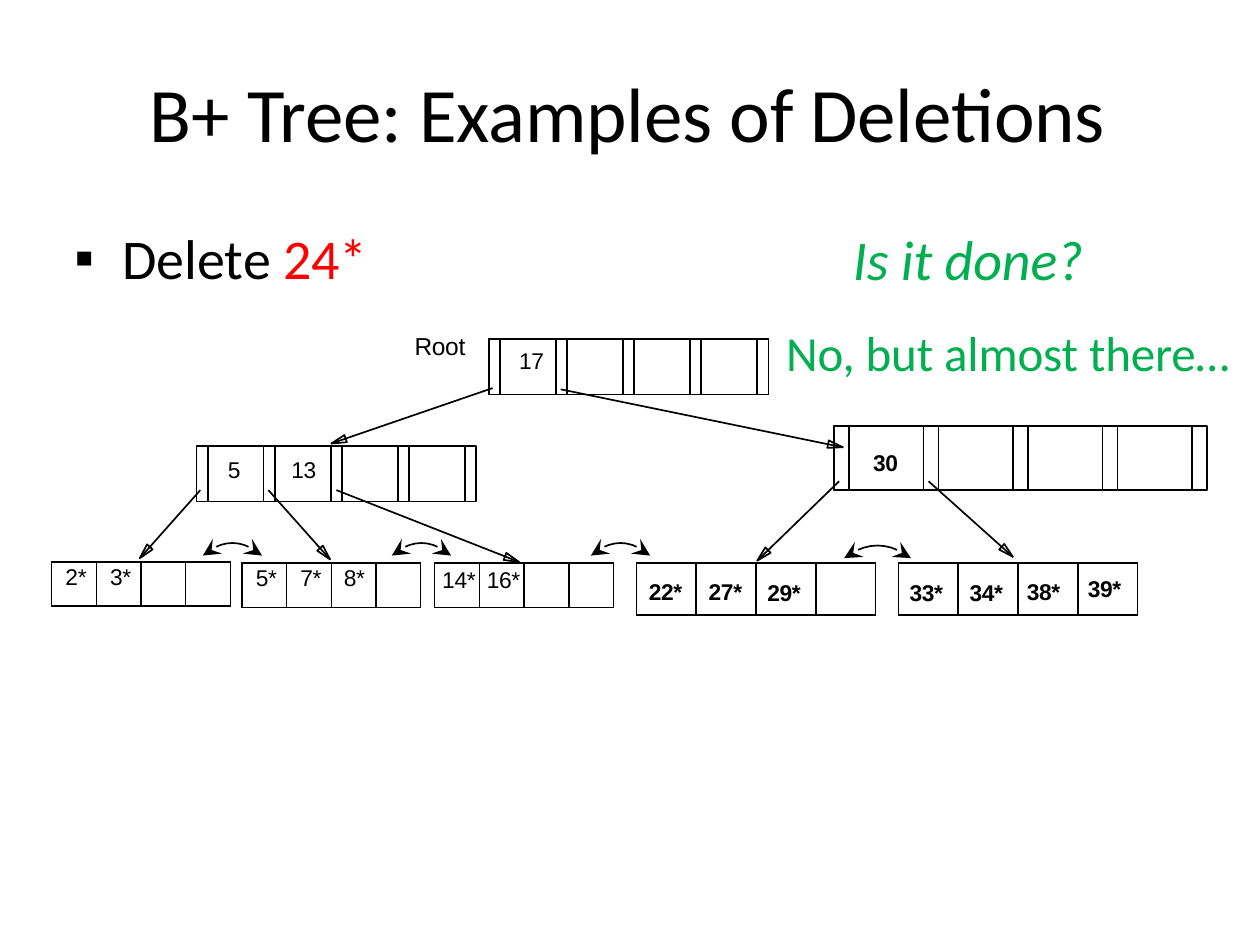
"""Build the B+ tree deletion slide."""
from dataclasses import dataclass
from math import hypot
from typing import NamedTuple

from lxml import etree
from pptx import Presentation
from pptx import util as u
from pptx.dml.color import RGBColor
from pptx.enum import shapes, text
from pptx.oxml.ns import qn


@dataclass(frozen=True)
class Theme:
    black: str = "000000"
    red: str = "FF0000"
    green: str = "00AF50"
    heading_font: str = "Calibri"
    tree_font: str = "Arial"
    title: int = 44
    body: int = 32
    answer: int = 28
    label: int = 14
    key: int = 13
    tight: int = -20
    line: float = 0.96
    border: int = 1


T = Theme()


class Run(NamedTuple):
    text: str
    size: int
    color: str = T.black
    font: str = T.heading_font
    bold: bool = False
    italic: bool = False
    spacing: int = 0


class Key(NamedTuple):
    text: str
    left: float
    top: float


class Leaf(NamedTuple):
    x: float
    y: float
    width: float
    height: float
    bold: bool
    keys: list[Key]


class Inner(NamedTuple):
    x: float
    y: float
    pointer: float
    width: float
    height: float
    bold: bool
    keys: list[Key]

    @property
    def pitch(self) -> float:
        return (self.width - self.pointer) / SLOTS


class Arrow(NamedTuple):
    x1: float
    y1: float
    x2: float
    y2: float


class Link(NamedTuple):
    x: float
    y: float
    width: float


SLOTS = 4
ROOT = Inner(3.88, 2.69, 0.09, 2.22, 0.44, False, [Key("17", 0.15, 0.08)])
SUBTREES = [
    (Inner(1.56, 3.54, 0.09, 2.22, 0.44, False, [Key("5", 0.16, 0.08), Key("13", 0.13, 0.08)]),
     [Arrow(3.91, 3.08, 2.63, 3.52), Arrow(1.59, 3.89, 1.11, 4.43),
      Arrow(2.13, 3.89, 2.62, 4.44), Arrow(2.67, 3.89, 4.12, 4.46)]),
    (Inner(6.62, 3.38, 0.12, 2.96, 0.51, True, [Key("30", 0.19, 0.18)]),
     [Arrow(4.45, 3.09, 6.69, 3.55), Arrow(6.66, 3.82, 6.01, 4.45), Arrow(7.37, 3.82, 8.04, 4.42)]),
]
LEAVES = [
    Leaf(0.41, 4.46, 1.42, 0.35, False, [Key("2*", 0.11, 0.02), Key("3*", 0.11, 0.02)]),
    Leaf(1.92, 4.47, 1.42, 0.35, False,
         [Key("5*", 0.11, 0.02), Key("7*", 0.11, 0.02), Key("8*", 0.1, 0.02)]),
    Leaf(3.45, 4.47, 1.42, 0.35, False, [Key("14*", 0.06, 0.04), Key("16*", 0.06, 0.04)]),
    Leaf(5.05, 4.47, 1.9, 0.41, True,
         [Key("22*", 0.1, 0.13), Key("27*", 0.1, 0.13), Key("29*", 0.09, 0.14)]),
    Leaf(7.13, 4.47, 1.9, 0.41, True,
         [Key("33*", 0.09, 0.14), Key("34*", 0.09, 0.14), Key("38*", 0.07, 0.13), Key("39*", 0.08, 0.11)]),
]
LINKS = [Link(1.61, 4.41, 0.47), Link(3.11, 4.41, 0.47), Link(4.69, 4.41, 0.47), Link(6.7, 4.43, 0.53)]


def add_runs(p, runs: list[Run]) -> None:
    for run in runs:
        r = p.add_run()
        r.text = run.text
        r.font.size = u.Pt(run.size)
        r.font.name = run.font
        r.font.bold = run.bold
        r.font.italic = run.italic
        r.font.color.rgb = RGBColor.from_string(run.color)
        r._r.get_or_add_rPr().set("spc", str(run.spacing))


def tree_run(words: str, size: int, bold: bool = False) -> Run:
    return Run(words, size, font=T.tree_font, bold=bold, spacing=T.tight)


def set_insets(holder, left: float = 0, top: float = 0) -> None:
    holder.margin_left, holder.margin_top = u.Inches(left), u.Inches(top)
    holder.margin_right = holder.margin_bottom = 0


def add_text(s, x: float, y: float, w: float, h: float, runs: list[Run]):
    sp = s.shapes.add_textbox(u.Inches(x), u.Inches(y), u.Inches(w), u.Inches(h))
    tf = sp.text_frame
    set_insets(tf)
    tf.word_wrap = True
    add_runs(tf.paragraphs[0], runs)
    return tf


def set_outline(sp) -> None:
    sp.shadow.inherit = False
    sp.fill.background()
    set_line(sp.line)


def set_line(line) -> None:
    line.color.rgb = RGBColor.from_string(T.black)
    line.width = u.Pt(T.line)


def add_borders(cell) -> None:
    pr = cell._tc.get_or_add_tcPr()
    for i, side in enumerate(("lnL", "lnR", "lnT", "lnB")):
        ln = etree.Element(qn(f"a:{side}"), w=str(u.Pt(T.border)))
        fill = etree.SubElement(ln, qn("a:solidFill"))
        etree.SubElement(fill, qn("a:srgbClr"), val=T.black)
        pr.insert(i, ln)


def add_row(s, node: Leaf | Inner, widths: list[float], keys: dict[int, Key]) -> None:
    table = s.shapes.add_table(1, len(widths), u.Inches(node.x), u.Inches(node.y),
                               u.Inches(node.width), u.Inches(node.height)).table
    table.first_row = table.horz_banding = False
    for i, width in enumerate(widths):
        table.columns[i].width = u.Inches(width)
        cell = table.cell(0, i)
        cell.fill.background()
        add_borders(cell)
        set_insets(cell)
        if i in keys:
            key = keys[i]
            set_insets(cell, key.left, key.top)
            add_runs(cell.text_frame.paragraphs[0], [tree_run(key.text, T.key, node.bold)])


def add_root(s, node: Inner) -> None:
    widths = [node.pointer, node.pitch - node.pointer] * SLOTS + [node.pointer]
    add_row(s, node, widths, {2 * i + 1: key for i, key in enumerate(node.keys)})


def add_leaf(s, leaf: Leaf) -> None:
    add_row(s, leaf, [leaf.width / SLOTS] * SLOTS, dict(enumerate(leaf.keys)))


def box(x: float, y: float, w: float, h: float) -> list[tuple[float, float]]:
    return [(x, y), (x + w, y), (x + w, y + h), (x, y + h)]


def arrowhead(a: Arrow, length: float = 0.12, half: float = 0.03) -> list[tuple[float, float]]:
    size = hypot(a.x2 - a.x1, a.y2 - a.y1)
    dx, dy = (a.x2 - a.x1) / size, (a.y2 - a.y1) / size
    bx, by = a.x2 - length * dx, a.y2 - length * dy
    return [(a.x2, a.y2), (bx - half * dy, by + half * dx), (bx + half * dy, by - half * dx)]


def add_outline(s, contours: list[list[tuple[float, float]]], close: bool = True):
    builder = None
    for contour in contours:
        start, *rest = [(u.Inches(x), u.Inches(y)) for x, y in contour]
        if builder is None:
            builder = s.shapes.build_freeform(*start)
        else:
            builder.move_to(*start)
        builder.add_line_segments(rest, close=close)
    sp = builder.convert_to_shape()
    set_outline(sp)
    return sp


def add_subtree(s, node: Inner, arrows: list[Arrow]) -> None:
    slots = [box(node.x + i * node.pitch, node.y, width, node.height)
             for i in range(SLOTS) for width in (node.pitch, node.pointer)]
    last = box(node.x + SLOTS * node.pitch, node.y, node.pointer, node.height)
    add_outline(s, [*slots, last, *map(arrowhead, arrows)])
    for arrow in arrows:
        add_shaft(s, arrow)
    for i, key in enumerate(node.keys):
        add_key(s, node, node.x + i * node.pitch + node.pointer, key)


def add_key(s, node: Inner, x: float, key: Key) -> None:
    sp = s.shapes.add_shape(shapes.MSO_SHAPE.RECTANGLE, u.Inches(x), u.Inches(node.y),
                            u.Inches(node.pitch - node.pointer), u.Inches(node.height))
    set_outline(sp)
    tf = sp.text_frame
    set_insets(tf, key.left, key.top)
    tf.vertical_anchor = text.MSO_ANCHOR.TOP
    tf.paragraphs[0].alignment = text.PP_ALIGN.LEFT
    add_runs(tf.paragraphs[0], [tree_run(key.text, T.key, node.bold)])


def add_shaft(s, arrow: Arrow) -> None:
    sp = s.shapes.add_connector(shapes.MSO_CONNECTOR.STRAIGHT, *(u.Inches(v) for v in arrow))
    set_line(sp.line)
    etree.SubElement(sp._element.spPr, qn("a:effectLst"))


def add_link(s, link: Link, steps: int = 10, rise: float = 0.1) -> None:
    arc = [(link.x + link.width * t, link.y - rise * 4 * t * (1 - t))
           for t in (i / steps for i in range(steps + 1))]
    ln = add_outline(s, [arc], close=False).line._get_or_add_ln()
    for tag in ("headEnd", "tailEnd"):
        etree.SubElement(ln, qn(f"a:{tag}"), type="stealth", w="lg", len="lg")


def add_bullet(p) -> None:
    pr = p._p.get_or_add_pPr()
    pr.set("marL", str(u.Inches(0.38)))
    pr.set("indent", str(u.Inches(-0.38)))
    etree.SubElement(pr, qn("a:buFont"), typeface=T.tree_font)
    etree.SubElement(pr, qn("a:buChar"), char="▪")


def main() -> None:
    prs = Presentation()
    prs.slide_width, prs.slide_height = u.Inches(10), u.Inches(7.5)
    s = prs.slides.add_slide(prs.slide_layouts[6])
    add_text(s, 1.19, 0.52, 8.08, 0.75, [Run("B+ Tree: Examples of Deletions", T.title, spacing=-10)])
    tf = add_text(s, 0.59, 1.77, 2.36, 0.55,
                  [Run("Delete ", T.body), Run("24*", T.body, T.red, spacing=T.tight)])
    add_bullet(tf.paragraphs[0])
    add_text(s, 3.29, 2.63, 0.44, 0.25, [tree_run("Root", T.label)])
    add_root(s, ROOT)
    for node, arrows in SUBTREES:
        add_subtree(s, node, arrows)
    for leaf in LEAVES:
        add_leaf(s, leaf)
    for link in LINKS:
        add_link(s, link)
    tf = add_text(s, 6.24, 1.78, 3.6, 1.26, [Run("Is it done?", T.body, T.green, italic=True, spacing=-10)])
    tf.paragraphs[0]._p.get_or_add_pPr().set("marL", str(u.Inches(0.53)))
    p = tf.add_paragraph()
    p.space_before = u.Pt(17.5)
    add_runs(p, [Run("No, but almost there…", T.answer, T.green, spacing=-5)])
    prs.save("out.pptx")


if __name__ == "__main__":
    main()
